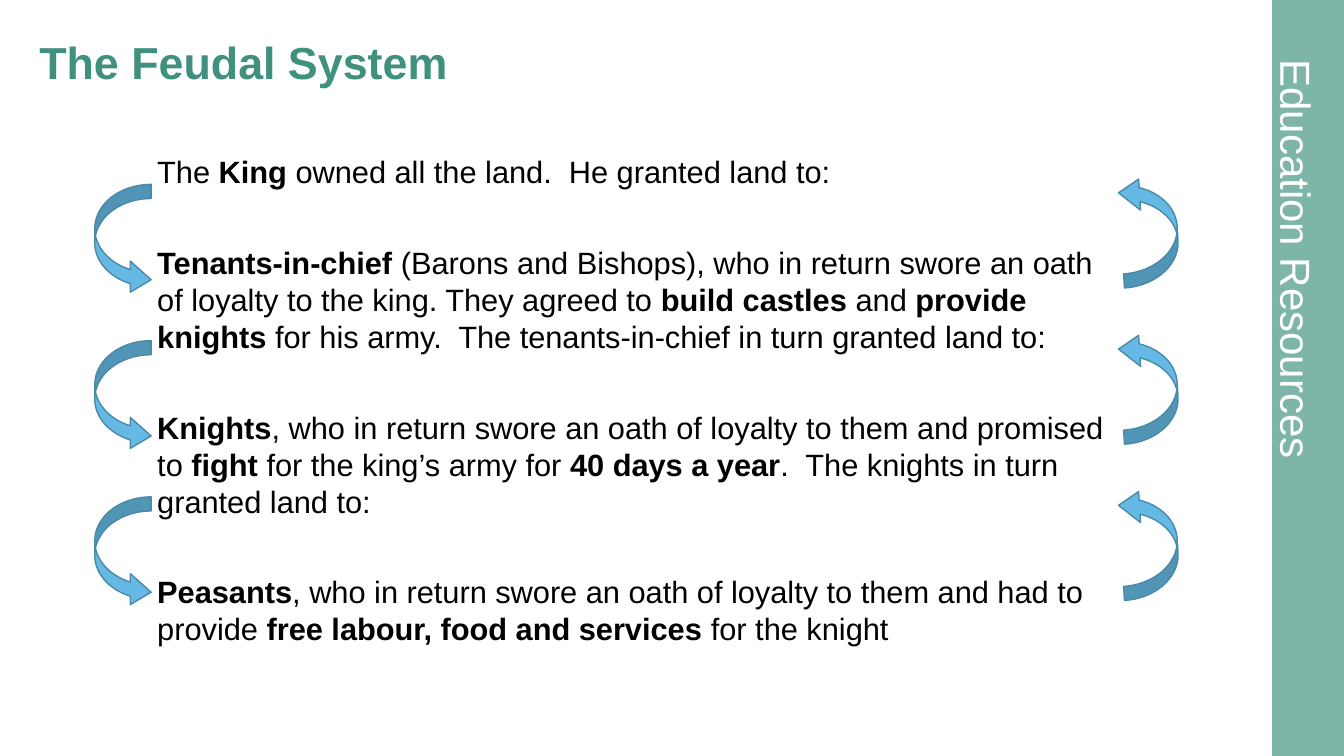
"""Build the Feudal System slide, with arrows for land granted and oaths returned."""
from pptx import Presentation
from pptx.dml.color import RGBColor
from pptx.enum.shapes import MSO_SHAPE
from pptx.enum.text import MSO_ANCHOR, PP_ALIGN
from pptx.util import Inches, Pt

BAND, CURVED_ARROW = MSO_SHAPE.RECTANGLE, MSO_SHAPE.CURVED_RIGHT_ARROW
LEFT, CENTER = PP_ALIGN.LEFT, PP_ALIGN.CENTER
TOP, MIDDLE = MSO_ANCHOR.TOP, MSO_ANCHOR.MIDDLE
COLORS = {"band": "7EB5A9", "title": "40907F", "text": "000000",
          "side": "FFFFFF", "arrow": "65B9E4", "edge": "4B89A8"}
COLUMNS, ROWS, CELL = 133.33, 75, 0.1
ARROW_SHAPE = (0.25, 0.55, 0.37)
RANKS = [
    "The *King* owned all the land.  He granted land to:",
    "*Tenants-in-chief* (Barons and Bishops), who in return swore an oath of loyalty "
    "to the king. They agreed to *build castles *and *provide knights* for his army.  "
    "The tenants-in-chief in turn granted land to:",
    "*Knights*, who in return swore an oath of loyalty to them and promised to *fight* "
    "for the king’s army for *40 days a year*.  The knights in turn granted land to:",
    "*Peasants*, who in return swore an oath of loyalty to them and had to provide "
    "*free labour, food and services *for the knight",
]


class FeudalSlide:
    """Hold the font, the grid and the current slide."""

    font = "Arial"

    def __init__(self):
        self.deck = Presentation()
        self.deck.slide_width = Inches(COLUMNS * CELL)
        self.deck.slide_height = Inches(ROWS * CELL)
        self.slide = self.deck.slides.add_slide(self.deck.slide_layouts[5])

    def grid(self, *cells):
        """Turn grid cells into lengths."""
        return [Inches(cell * CELL) for cell in cells]

    def color(self, name):
        """Look up a colour by its role."""
        return RGBColor.from_string(COLORS[name])

    def frame(self, holder, anchor, insets, wrap=True):
        """Set the anchor, insets and wrapping of a text frame."""
        frame = holder.text_frame
        frame.word_wrap, frame.vertical_anchor = wrap, anchor
        (frame.margin_left, frame.margin_top,
         frame.margin_right, frame.margin_bottom) = self.grid(*insets)
        return frame

    def style(self, paragraph, size, color, align=LEFT, spacing=1.0, bold=None):
        """Set the font and layout of a paragraph."""
        paragraph.alignment, paragraph.line_spacing = align, spacing
        font = paragraph.font
        font.name, font.size, font.bold = self.font, Pt(size), bold
        font.color.rgb = self.color(color)

    def title(self, text, *cells):
        """Place and format the title."""
        heading = self.slide.shapes.title
        heading.left, heading.top, heading.width, heading.height = self.grid(*cells)
        frame = self.frame(heading, MIDDLE, (0, 0.5, 1, 0.5))
        frame.text = text
        self.style(frame.paragraphs[0], 32, "title", spacing=0.9, bold=True)

    def shape(self, kind, cells, fill, edge=None):
        """Add a flat preset shape."""
        shape = self.slide.shapes.add_shape(kind, *self.grid(*cells))
        shape.shadow.inherit = False
        shape.fill.solid()
        shape.fill.fore_color.rgb = self.color(fill)
        if edge:
            shape.line.color.rgb, shape.line.width = self.color(edge), Pt(1)
        else:
            shape.line.fill.background()
        return shape

    def side_label(self, text, *cells):
        """Add the label that reads down the band."""
        label = self.slide.shapes.add_textbox(*self.grid(*cells))
        label.rotation = 90
        frame = self.frame(label, TOP, (0, 0, 0, 0), wrap=False)
        frame.text = text
        self.style(frame.paragraphs[0], 30, "side", CENTER, Pt(58.8))

    def body(self, ranks, *cells):
        """Add one paragraph per rank, with starred phrases in bold."""
        box = self.slide.shapes.add_textbox(*self.grid(*cells))
        frame = self.frame(box, TOP, (0, 0.5, 1, 0.5))
        for index, rank in enumerate(ranks):
            paragraph = frame.add_paragraph() if index else frame.paragraphs[0]
            self.style(paragraph, 22, "text")
            if index:
                paragraph.space_before = Pt(38.4)
            for part, phrase in enumerate(rank.split("*")):
                if phrase:
                    run = paragraph.add_run()
                    run.text, run.font.bold = phrase, part % 2 == 1

    def arrow(self, column, row, turn=0):
        """Add a curved arrow between two ranks."""
        arrow = self.shape(CURVED_ARROW, (column, row, 5.6, 11), "arrow", "edge")
        arrow.rotation = turn
        for index, amount in enumerate(ARROW_SHAPE):
            arrow.adjustments[index] = amount


def main():
    """Draw and save the slide."""
    feudal = FeudalSlide()
    feudal.shape(BAND, (126.2, 0, COLUMNS - 126.2, ROWS), "band")
    feudal.side_label("Education Resources", 110.7, 22.1, 40.1, 7.2)
    feudal.title("The Feudal System", 3.9, 2.5, 120.3, 7.8)
    feudal.body(RANKS, 15.6, 14.7, 96.9, 52.7)
    for step in range(len(RANKS) - 1):
        feudal.arrow(9.4, 18.3 + 15.5 * step)
        feudal.arrow(111.2, 17.4 + 15.5 * step, turn=176.4)
    feudal.deck.save("out.pptx")


if __name__ == "__main__":
    main()
